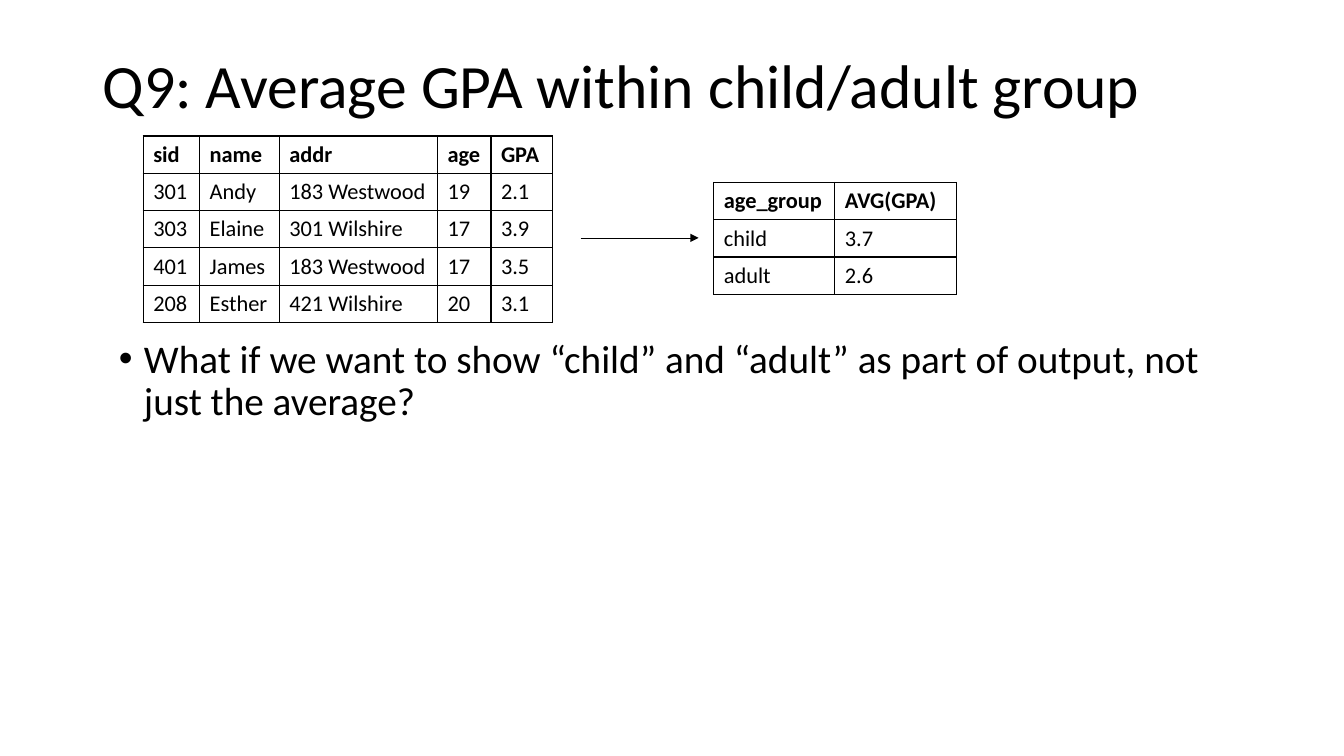
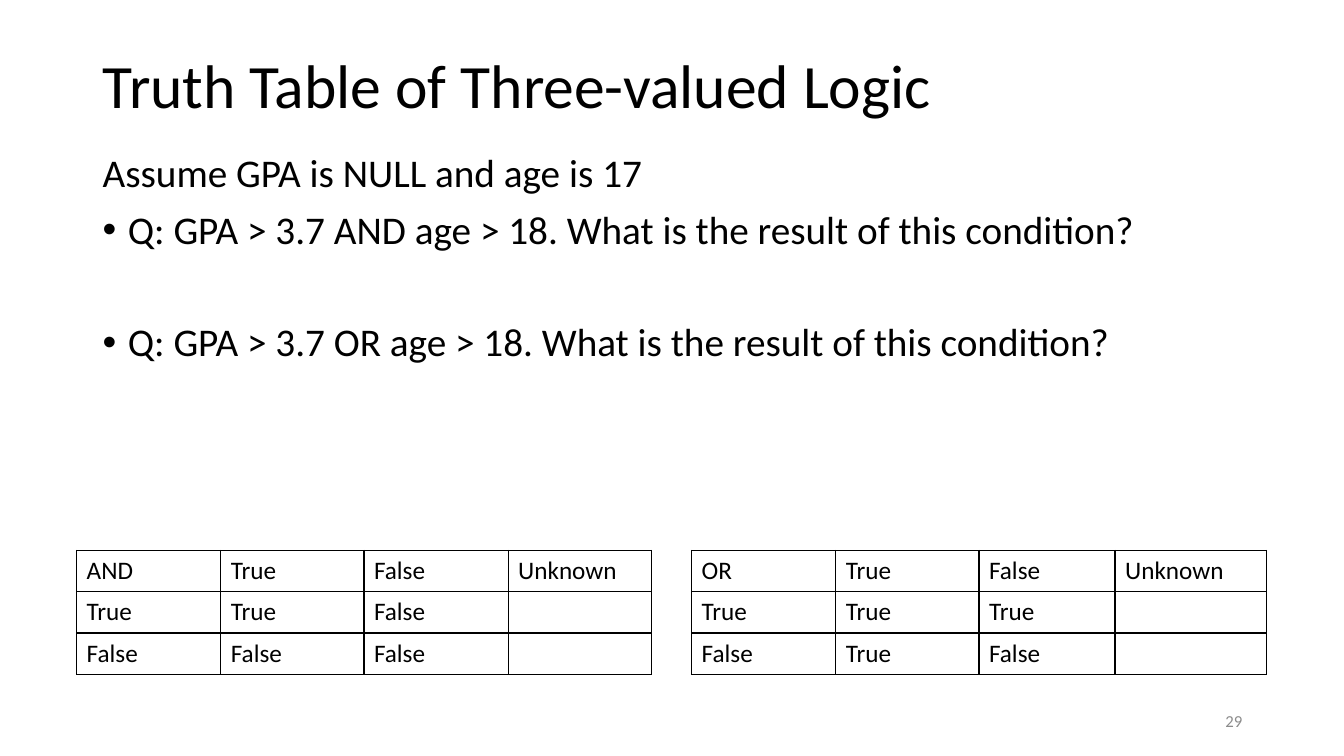
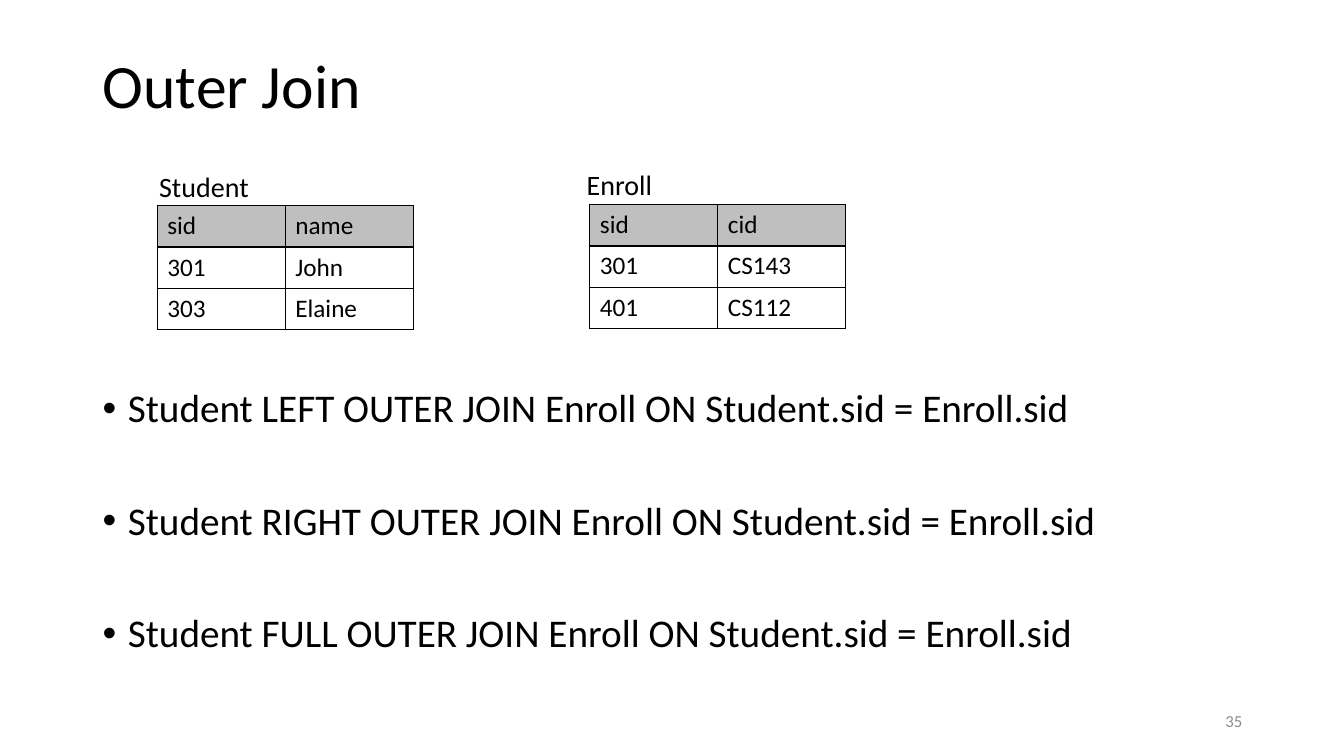
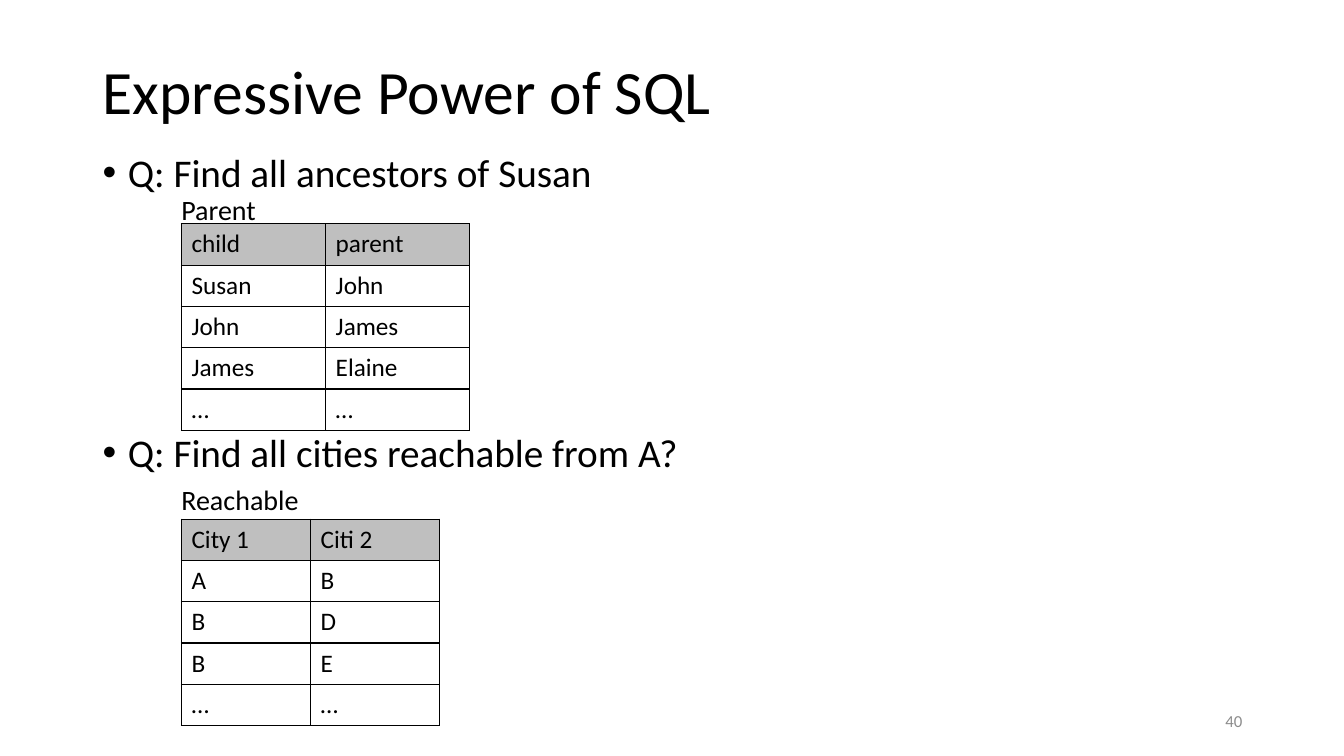
import dataclasses
import typing

import lxml.etree
import pptx
import pptx.dml.color
import pptx.enum.shapes
import pptx.enum.text
import pptx.oxml.ns
import pptx.util

PX = 9144
ALIGN = pptx.enum.text.PP_ALIGN
ANCHOR = pptx.enum.text.MSO_ANCHOR


@dataclasses.dataclass(frozen=True)
class Theme:
    font: str = "Calibri"
    bullet_font: str = "Arial"
    ink: str = "000000"
    muted: str = "8C8C8C"
    header: str = "BFBFBF"
    title: int = 44
    body: int = 28
    label: int = 20
    cell: int = 18
    small_cell: int = 16
    number: int = 12
    leading: float = 0.9
    gap: int = 10
    blank_line: int = 40
    border: float = 1
    arrow: float = 0.5


THEME = Theme()


class Box(typing.NamedTuple):
    x: int
    y: int
    w: int
    h: int


class Bullet(typing.NamedTuple):
    text: str
    lines_before: int = 0
    marked: bool = True


@dataclasses.dataclass(frozen=True)
class Grid:
    x: int
    y: int
    cols: tuple[int, ...]
    rows: tuple[tuple[str, ...], ...]
    row_h: int = 41
    size: int = THEME.cell
    bold_header: bool = False
    shaded_header: bool = False


class Label(typing.NamedTuple):
    text: str
    box: Box


class Arrow(typing.NamedTuple):
    x1: int
    y1: int
    x2: int
    y2: int


@dataclasses.dataclass(frozen=True)
class Page:
    title: str
    body: Box
    bullets: tuple[Bullet, ...]
    grids: tuple[Grid, ...]
    labels: tuple[Label, ...] = ()
    arrows: tuple[Arrow, ...] = ()
    number: str = ""
    title_h: int = 95


NUMBER_BOX = Box(942, 695, 300, 40)


def px(n: int) -> int:
    return pptx.util.Emu(n * PX)


def rgb(color: str) -> pptx.dml.color.RGBColor:
    return pptx.dml.color.RGBColor.from_string(color)


def apply(target: typing.Any, values: dict[str, typing.Any]) -> None:
    for name, value in values.items():
        setattr(target, name, value)


def add_xml(parent: typing.Any, tag: str, **attrs: str) -> typing.Any:
    return lxml.etree.SubElement(parent, pptx.oxml.ns.qn(tag), attrs)


def write(p: typing.Any, text: str, size: int, color: str = THEME.ink,
          bold: bool = False, **fmt: typing.Any) -> None:
    r = p.add_run()
    r.text = text
    apply(r.font, {"name": THEME.font, "size": pptx.util.Pt(size), "bold": bold})
    r.font.color.rgb = rgb(color)
    apply(p, fmt)


def add_box(s: typing.Any, box: Box, anchor: typing.Any = ANCHOR.TOP) -> typing.Any:
    tf = s.shapes.add_textbox(*map(px, box)).text_frame
    apply(tf, {"word_wrap": True, "vertical_anchor": anchor})
    return tf


def set_title(s: typing.Any, text: str, height: int) -> None:
    sp = s.shapes.title
    apply(sp, {"left": px(92), "top": px(40), "width": px(1150), "height": px(height)})
    apply(sp.text_frame, {"vertical_anchor": ANCHOR.MIDDLE,
                          "auto_size": pptx.enum.text.MSO_AUTO_SIZE.NONE})
    write(sp.text_frame.paragraphs[0], text, THEME.title,
          alignment=ALIGN.LEFT, line_spacing=THEME.leading)


def add_bullets(s: typing.Any, box: Box, bullets: tuple[Bullet, ...]) -> None:
    tf = add_box(s, box)
    for i, b in enumerate(bullets):
        p = tf.add_paragraph() if i else tf.paragraphs[0]
        before = THEME.gap + b.lines_before * THEME.blank_line
        write(p, b.text, THEME.body, line_spacing=THEME.leading,
              space_before=pptx.util.Pt(before))
        if b.marked:
            pPr = p._p.get_or_add_pPr()
            pPr.set("marL", str(px(25)))
            pPr.set("indent", str(-px(25)))
            add_xml(pPr, "a:buFont", typeface=THEME.bullet_font)
            add_xml(pPr, "a:buChar", char="•")


def add_borders(cell: typing.Any) -> None:
    tcPr = cell._tc.get_or_add_tcPr()
    for side in ("a:lnL", "a:lnR", "a:lnT", "a:lnB"):
        ln = add_xml(tcPr, side, w=str(pptx.util.Pt(THEME.border)))
        add_xml(add_xml(ln, "a:solidFill"), "a:srgbClr", val=THEME.ink)


def add_grid(s: typing.Any, grid: Grid) -> None:
    n = len(grid.rows)
    table = s.shapes.add_table(n, len(grid.cols), px(grid.x), px(grid.y),
                               px(sum(grid.cols)), px(grid.row_h * n)).table
    apply(table, {"first_row": False, "horz_banding": False})
    for col, width in zip(table.columns, grid.cols):
        col.width = px(width)
    for i, row in enumerate(grid.rows):
        table.rows[i].height = px(grid.row_h)
        for j, text in enumerate(row):
            cell = table.cell(i, j)
            add_borders(cell)
            if grid.shaded_header and i == 0:
                cell.fill.solid()
                cell.fill.fore_color.rgb = rgb(THEME.header)
            else:
                cell.fill.background()
            if text:
                write(cell.text_frame.paragraphs[0], text, grid.size,
                      bold=grid.bold_header and i == 0)


def add_arrow(s: typing.Any, arrow: Arrow) -> None:
    c = s.shapes.add_connector(pptx.enum.shapes.MSO_CONNECTOR.STRAIGHT, *map(px, arrow))
    c.line.color.rgb = rgb(THEME.ink)
    c.line.width = pptx.util.Pt(THEME.arrow)
    add_xml(c.line._get_or_add_ln(), "a:tailEnd", type="triangle")
    add_xml(c._element.spPr, "a:effectLst")


def add_page(prs: typing.Any, page: Page) -> None:
    s = prs.slides.add_slide(prs.slide_layouts[5])
    set_title(s, page.title, page.title_h)
    add_bullets(s, page.body, page.bullets)
    for grid in page.grids:
        add_grid(s, grid)
    for label in page.labels:
        write(add_box(s, label.box).paragraphs[0], label.text, THEME.label)
    for arrow in page.arrows:
        add_arrow(s, arrow)
    if page.number:
        write(add_box(s, NUMBER_BOX, ANCHOR.MIDDLE).paragraphs[0], page.number,
              THEME.number, THEME.muted, alignment=ALIGN.RIGHT)


PAGES = (
    Page(
        "Q9: Average GPA within child/adult group",
        Box(108, 332, 1150, 360),
        (Bullet("What if we want to show “child” and “adult” as part of output, "
                "not just the average?"),),
        (
            Grid(142, 135, (56, 79, 157, 53, 61), (
                ("sid", "name", "addr", "age", "GPA"),
                ("301", "Andy", "183 Westwood", "19", "2.1"),
                ("303", "Elaine", "301 Wilshire", "17", "3.9"),
                ("401", "James", "183 Westwood", "17", "3.5"),
                ("208", "Esther", "421 Wilshire", "20", "3.1"),
            ), 37, THEME.small_cell, bold_header=True),
            Grid(708, 181, (120, 121), (
                ("age_group", "AVG(GPA)"),
                ("child", "3.7"),
                ("adult", "2.6"),
            ), 37, THEME.small_cell, bold_header=True),
        ),
        arrows=(Arrow(576, 236, 693, 236),),
    ),
    Page(
        "Truth Table of Three-valued Logic",
        Box(92, 148, 1150, 547),
        (
            Bullet("Assume GPA is NULL and age is 17", marked=False),
            Bullet("Q: GPA > 3.7 AND age > 18. What is the result of this condition?"),
            Bullet("Q: GPA > 3.7 OR age > 18. What is the result of this condition?", 1),
        ),
        (
            Grid(76, 546, (143, 142, 143, 142), (
                ("AND", "True", "False", "Unknown"),
                ("True", "True", "False", ""),
                ("False", "False", "False", ""),
            )),
            Grid(686, 546, (143, 142, 135, 150), (
                ("OR", "True", "False", "Unknown"),
                ("True", "True", "True", ""),
                ("False", "True", "False", ""),
            )),
        ),
        number="29",
    ),
    Page(
        "Outer Join",
        Box(92, 381, 1150, 351),
        tuple(Bullet(f"Student {kind} OUTER JOIN Enroll ON Student.sid = Enroll.sid", lines)
              for kind, lines in (("LEFT", 0), ("RIGHT", 1), ("FULL", 1))),
        (
            Grid(156, 204, (127, 127), (
                ("sid", "name"), ("301", "John"), ("303", "Elaine"),
            ), shaded_header=True),
            Grid(585, 203, (127, 127), (
                ("sid", "cid"), ("301", "CS143"), ("401", "CS112"),
            ), shaded_header=True),
        ),
        (
            Label("Enroll", Box(572, 161, 133, 43)),
            Label("Student", Box(148, 163, 176, 44)),
        ),
        number="35",
    ),
    Page(
        "Expressive Power of SQL",
        Box(92, 147, 1150, 528),
        (
            Bullet("Q: Find all ancestors of Susan"),
            Bullet("Q: Find all cities reachable from A?", 4),
        ),
        (
            Grid(180, 222, (143, 143), (
                ("child", "parent"), ("Susan", "John"), ("John", "James"),
                ("James", "Elaine"), ("…", "…"),
            ), shaded_header=True),
            Grid(180, 515, (128, 128), (
                ("City 1", "Citi 2"), ("A", "B"), ("B", "D"), ("B", "E"), ("…", "…"),
            ), shaded_header=True),
        ),
        (
            Label("Parent", Box(170, 186, 176, 44)),
            Label("Reachable", Box(170, 474, 176, 44)),
        ),
        number="40",
        title_h=107,
    ),
)


def main() -> None:
    prs = pptx.Presentation()
    apply(prs, {"slide_width": px(1333), "slide_height": px(750)})
    for page in PAGES:
        add_page(prs, page)
    prs.save("out.pptx")


if __name__ == "__main__":
    main()
